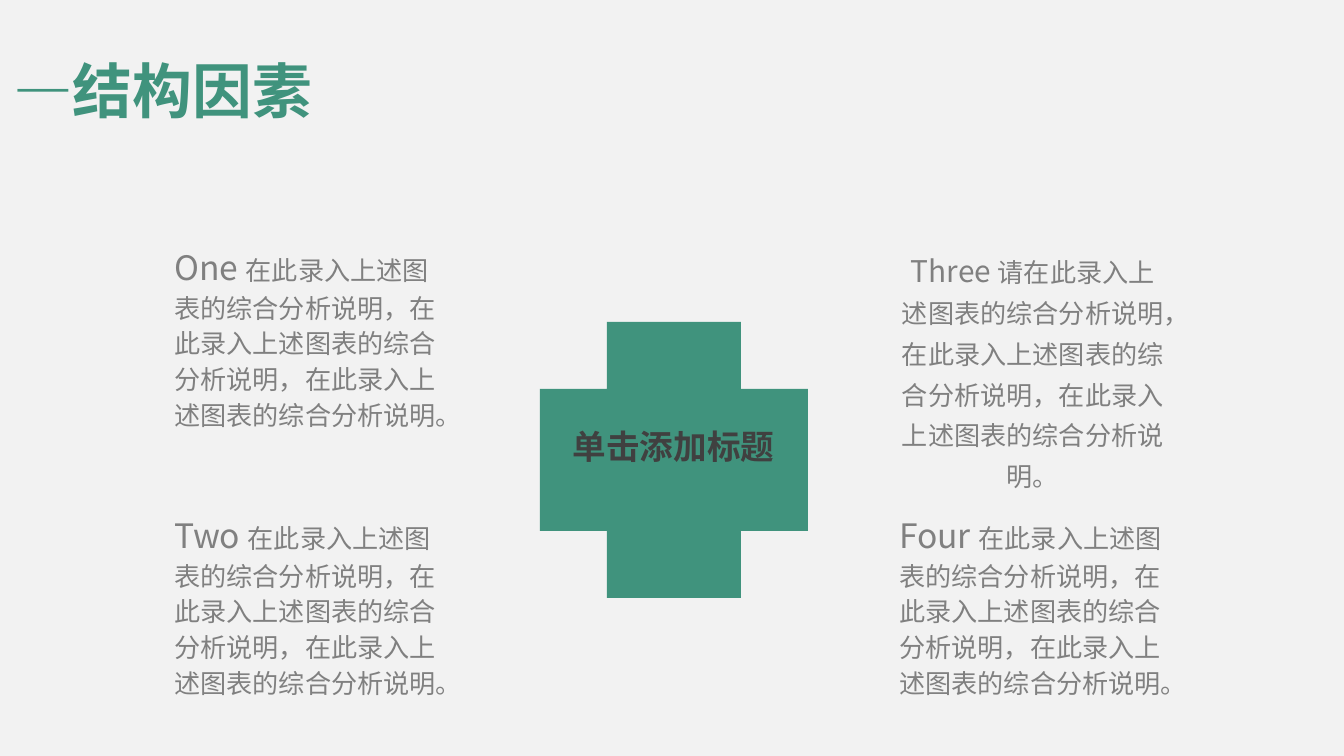
from pptx import Presentation
from pptx.dml.color import RGBColor
from pptx.enum.shapes import MSO_SHAPE
from pptx.enum.text import MSO_ANCHOR, MSO_AUTO_SIZE, PP_ALIGN
from pptx.oxml.ns import qn
from pptx.util import Emu, Pt
from lxml.etree import SubElement

# Content
TITLE = "—结构因素"
CENTRE_LABEL = "单击添加标题"
BODY = "在此录入上述图表的综合分析说明，" * 2 + "在此录入上述图表的综合分析说明。"
# heading, lead text, column, row, height, format
NOTES = [
    ("One ", "", 0, 0, 204, {}),
    ("Three ", "请", 1, 0, 301,
     {"align": PP_ALIGN.CENTER, "spacing": 1.3, "lead_size": 16}),
    ("Two ", "", 0, 1, 204, {}),
    ("Four ", "", 1, 1, 204, {}),
]

# Layout in px
PX = 914400 / 134.4
WIDTH, HEIGHT = 1344, 756
NOTE_LEFT, NOTE_TOP, NOTE_WIDTH = 161, 235, 294
COLUMN_STEP, ROW_STEP = 725, 268
GREEN, GREY, DARK, PALE = "40937D", "808080", "404040", "F2F2F2"
CJK = "Noto Sans CJK SC"


def px(*values):
    return [Emu(round(value * PX)) for value in values]


def colour(code):
    return RGBColor.from_string(code)


def write(shape, spans, font=CJK, ink=GREY, bold=False, wrap=True,
          align=PP_ALIGN.LEFT, spacing=None, anchor=MSO_ANCHOR.TOP):
    """Fill a shape with one paragraph of (text, size) spans."""
    frame = shape.text_frame
    frame.word_wrap = wrap
    frame.auto_size = MSO_AUTO_SIZE.SHAPE_TO_FIT_TEXT
    frame.vertical_anchor = anchor
    para = frame.paragraphs[0]
    para.alignment = align
    para.line_spacing = spacing
    for text, size in spans:
        span = para.add_run()
        span.text = text
        span.font.name = font
        span.font.size = Pt(size)
        span.font.bold = bold
        span.font.color.rgb = colour(ink)
        SubElement(span.font._element, qn("a:ea")).set("typeface", CJK)


def add_plus(group, *place):
    plus = group.shapes.add_shape(MSO_SHAPE.CROSS, *px(*place))
    plus.shadow.inherit = False
    plus.fill.solid()
    plus.fill.fore_color.rgb = colour(GREEN)
    plus.line.fill.background()
    return plus


deck = Presentation()
deck.slide_width, deck.slide_height = px(WIDTH, HEIGHT)
page = deck.slides.add_slide(deck.slide_layouts[6])
page.background.fill.solid()
page.background.fill.fore_color.rgb = colour(PALE)

# Central cross with its label
cross = page.shapes.add_group_shape()
add_plus(cross, 540, 322, 268, 276)
label = add_plus(cross, 558, 403, 231, 86)
write(label, [(CENTRE_LABEL, 18)], font="Arial Narrow", ink=DARK, bold=True,
      wrap=False, align=PP_ALIGN.CENTER, anchor=MSO_ANCHOR.MIDDLE)

# Four notes around the cross
for heading, lead, column, row, height, style in NOTES:
    box = page.shapes.add_textbox(*px(
        NOTE_LEFT + column * COLUMN_STEP, NOTE_TOP + row * ROW_STEP,
        NOTE_WIDTH, height))
    write(box, [(heading, style.get("lead_size", 18)), (lead + BODY, 14)],
          align=style.get("align", PP_ALIGN.LEFT),
          spacing=style.get("spacing", 1.14))

# Title
title = page.shapes.add_textbox(*px(0, 47, 336, 86))
write(title, [(TITLE, 32)], ink=GREEN, bold=True)

deck.save("out.pptx")
